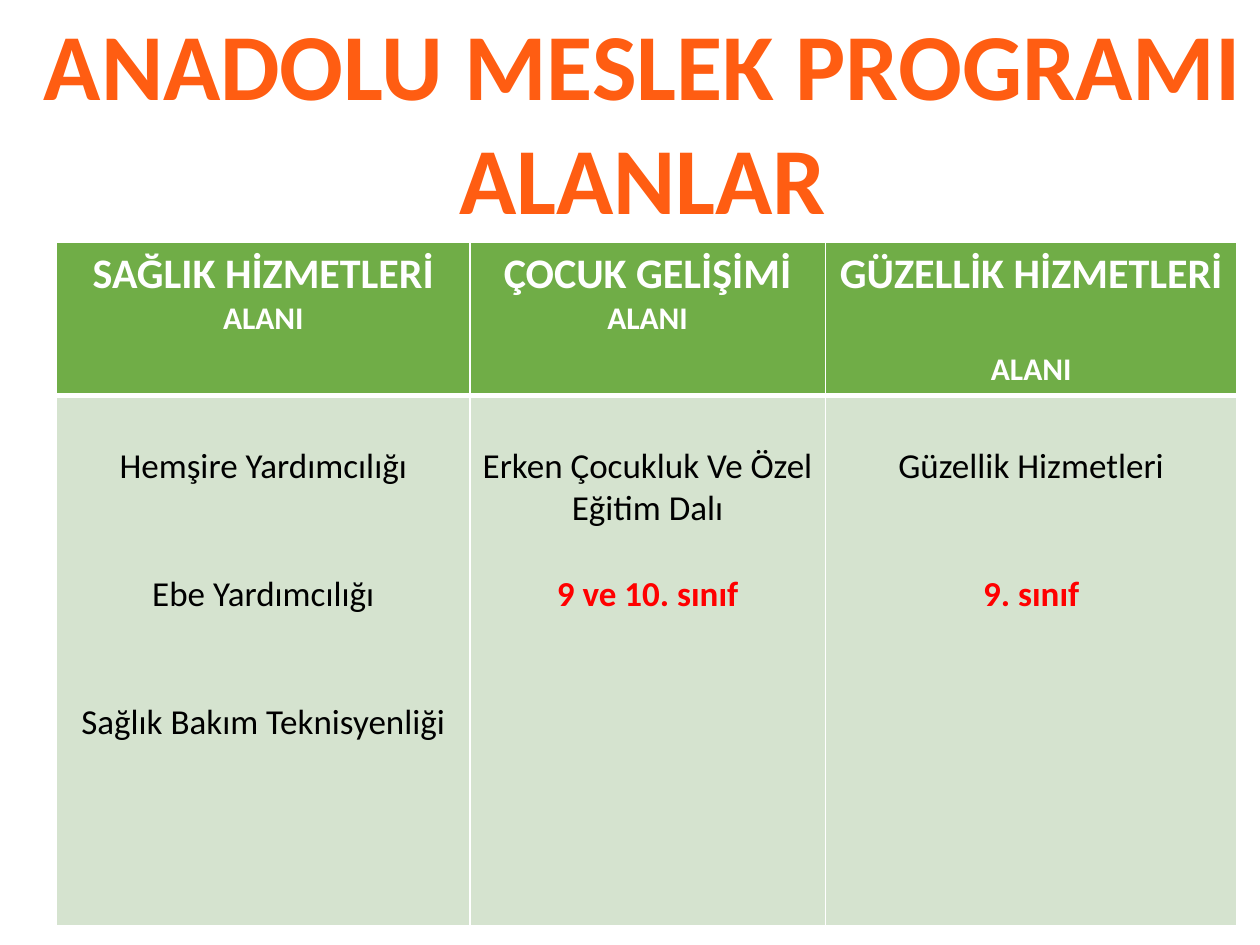
import pptx
import pptx.util
import pptx.dml.color
import pptx.enum.text
import lxml.etree
import pptx.oxml.ns

Inches = pptx.util.Inches
Pt = pptx.util.Pt

LINE = 24.4  # height of one 20 pt line, in points
COLUMN_WIDTHS = (3.28, 2.82, 3.27)
ROW_HEIGHTS = (1.21, 4.21)

# Heading, and space above its second line
HEADINGS = (
    ("SAĞLIK HİZMETLERİ", 0),
    ("ÇOCUK GELİŞİMİ", 0),
    ("GÜZELLİK HİZMETLERİ", 29.3),
)

# Branches, grade note, and lines left free between entries
BRANCHES = (
    (("Hemşire Yardımcılığı", "Ebe Yardımcılığı", "Sağlık Bakım Teknisyenliği"), None, 2),
    (("Erken Çocukluk Ve Özel Eğitim Dalı",), "9 ve 10. sınıf", 1),
    (("Güzellik Hizmetleri",), "9. sınıf", 2),
)


def color(value):
    return pptx.dml.color.RGBColor.from_string(value)


def write(frame, text, size, fill="000000", bold=False, before=0, first=False):
    """Add one centred paragraph to a text frame."""
    para = frame.paragraphs[0] if first else frame.add_paragraph()
    para.alignment = pptx.enum.text.PP_ALIGN.CENTER
    para.space_before = Pt(before)
    span = para.add_run()
    span.text = text
    span.font.name = "Calibri"
    span.font.size = Pt(size)
    span.font.bold = bold
    span.font.color.rgb = color(fill)


def style_cell(cell, fill, bottom_width):
    """Give a cell white borders and a solid fill."""
    properties = cell._tc.get_or_add_tcPr()
    for side, width in (("L", 1), ("R", 1), ("T", 1), ("B", bottom_width)):
        line = lxml.etree.SubElement(
            properties, pptx.oxml.ns.qn("a:ln" + side), w=str(Pt(width)))
        solid = lxml.etree.SubElement(line, pptx.oxml.ns.qn("a:solidFill"))
        lxml.etree.SubElement(solid, pptx.oxml.ns.qn("a:srgbClr"), val="FFFFFF")
    cell.fill.solid()
    cell.fill.fore_color.rgb = color(fill)


def add_title(page, left, top, width, height):
    box = page.shapes.add_textbox(
        Inches(left), Inches(top), Inches(width), Inches(height))
    frame = box.text_frame
    frame.word_wrap = False
    frame.auto_size = pptx.enum.text.MSO_AUTO_SIZE.SHAPE_TO_FIT_TEXT
    for index, text in enumerate(("ANADOLU MESLEK PROGRAMI", "ALANLAR")):
        write(frame, text, 54, fill="FF5D12", bold=True, first=index == 0)


def add_fields_table(page, left, top, width, height):
    table = page.shapes.add_table(
        2, 3, Inches(left), Inches(top), Inches(width), Inches(height)).table
    for column, column_width in zip(table.columns, COLUMN_WIDTHS):
        column.width = Inches(column_width)
    for row, row_height in zip(table.rows, ROW_HEIGHTS):
        row.height = Inches(row_height)

    # Header row
    for index, (heading, gap) in enumerate(HEADINGS):
        cell = table.cell(0, index)
        style_cell(cell, "70AD47", 3)
        write(cell.text_frame, heading, 24, fill="FFFFFF", bold=True, first=True)
        write(cell.text_frame, "ALANI", 18, fill="FFFFFF", bold=True, before=gap)

    # Branches of each field, starting one line down
    for index, (branches, grade, free_lines) in enumerate(BRANCHES):
        cell = table.cell(1, index)
        style_cell(cell, "D5E3CF", 1)
        cell.margin_top = Inches(0.39)
        gap = free_lines * LINE
        for number, branch in enumerate(branches):
            write(cell.text_frame, branch, 20,
                  before=gap if number else 0, first=number == 0)
        if grade:
            write(cell.text_frame, grade, 20, fill="FF0000", bold=True, before=gap)


def main():
    deck = pptx.Presentation()
    deck.slide_width = Inches(10)
    deck.slide_height = Inches(7.5)
    page = deck.slides.add_slide(deck.slide_layouts[6])
    add_fields_table(page, 0.45, 1.92, sum(COLUMN_WIDTHS), sum(ROW_HEIGHTS))
    add_title(page, 0.2, 0, 9.8, 1.92)
    deck.save("out.pptx")


if __name__ == "__main__":
    main()
